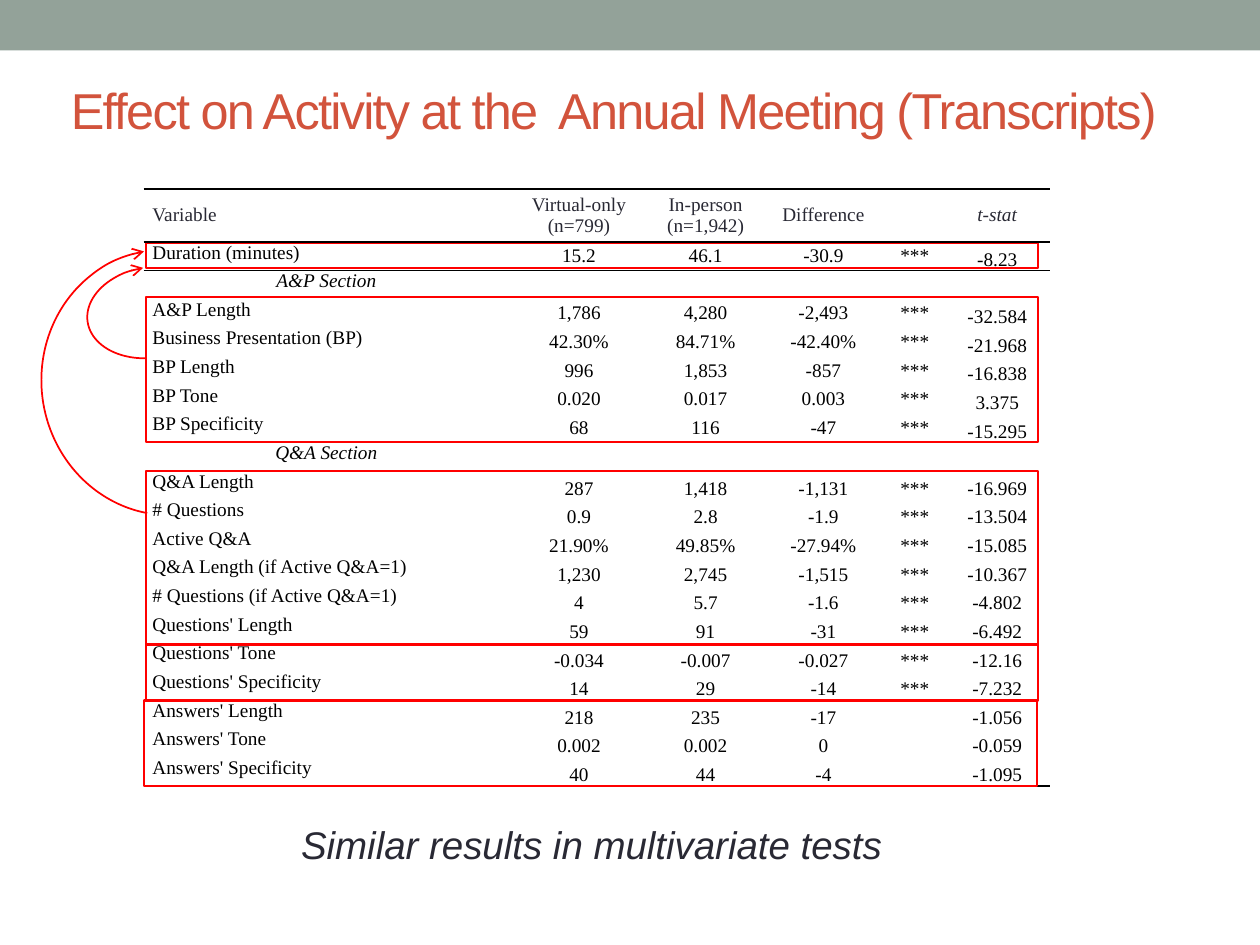
from lxml.etree import SubElement
from pptx import Presentation
from pptx.dml.color import RGBColor
from pptx.enum.shapes import MSO_SHAPE as Shape
from pptx.enum.text import MSO_ANCHOR as Anchor, MSO_AUTO_SIZE as AutoSize, PP_ALIGN as Align
from pptx.oxml.ns import qn
from pptx.util import Inches, Pt

COLORS = {"band": "93A299", "title": "D2533C", "dark": "292934",
          "black": "000000", "red": "FF0000"}


def add_run(paragraph, text, font, size, color, italic=False):
    run = paragraph.add_run()
    run.text = text
    run.font.name = font
    run.font.size = Pt(size)
    run.font.italic = italic
    run.font.color.rgb = RGBColor.from_string(COLORS[color])
    return run


def add_outline(kind, left, top, width, height, line_width):
    shape = slide.shapes.add_shape(kind, Inches(left), Inches(top), Inches(width), Inches(height))
    shape.shadow.inherit = False
    shape.fill.background()
    shape.line.color.rgb = RGBColor.from_string(COLORS["red"])
    shape.line.width = Pt(line_width)
    return shape


presentation = Presentation()
presentation.slide_width, presentation.slide_height = Inches(10), Inches(7.5)
slide = presentation.slides.add_slide(presentation.slide_layouts[6])

# Top band
band = slide.shapes.add_shape(Shape.RECTANGLE, 0, 0, Inches(10), Inches(0.4))
band.shadow.inherit = False
band.fill.solid()
band.fill.fore_color.rgb = RGBColor.from_string(COLORS["band"])
band.line.fill.background()

# Title
title = slide.shapes.add_textbox(Inches(0.37), Inches(0.62), Inches(9), Inches(0.5))
title.text_frame.word_wrap = True
title.text_frame.vertical_anchor = Anchor.MIDDLE
paragraph = title.text_frame.paragraphs[0]
paragraph.alignment = Align.CENTER
run = add_run(paragraph, "Effect on Activity at the  Annual Meeting (Transcripts)", "Arial", 28.8, "title")
run.font._element.set("spc", "-100")

# Closing remark
remark = slide.shapes.add_textbox(Inches(2.26), Inches(6.47), Inches(4.87), Inches(0.47))
remark.text_frame.word_wrap = False
remark.text_frame.auto_size = AutoSize.SHAPE_TO_FIT_TEXT
paragraph = remark.text_frame.paragraphs[0]
paragraph.alignment = Align.CENTER
add_run(paragraph, "Similar results in multivariate tests", "Arial", 22, "dark", italic=True)

# Highlight boxes behind the table
for top, height in [(1.93, 0.2), (2.36, 1.15)]:
    add_outline(Shape.RECTANGLE, 1.16, top, 7.08, height, 1.25)

# Table
rows = [
    ("Variable", "Virtual-only (n=799)", "In-person (n=1,942)", "Difference", "", "t-stat"),
    ("Duration (minutes)", "15.2", "46.1", "-30.9", "***", "-8.23"),
    ("A&P Section", "", "", "", "", ""),
    ("A&P Length", "1,786", "4,280", "-2,493", "***", "-32.584"),
    ("Business Presentation (BP)", "42.30%", "84.71%", "-42.40%", "***", "-21.968"),
    ("BP Length", "996", "1,853", "-857", "***", "-16.838"),
    ("BP Tone", "0.020", "0.017", "0.003", "***", "3.375"),
    ("BP Specificity", "68", "116", "-47", "***", "-15.295"),
    ("Q&A Section", "", "", "", "", ""),
    ("Q&A Length", "287", "1,418", "-1,131", "***", "-16.969"),
    ("# Questions", "0.9", "2.8", "-1.9", "***", "-13.504"),
    ("Active Q&A", "21.90%", "49.85%", "-27.94%", "***", "-15.085"),
    ("Q&A Length (if Active Q&A=1)", "1,230", "2,745", "-1,515", "***", "-10.367"),
    ("# Questions (if Active Q&A=1)", "4", "5.7", "-1.6", "***", "-4.802"),
    ("Questions' Length", "59", "91", "-31", "***", "-6.492"),
    ("Questions' Tone", "-0.034", "-0.007", "-0.027", "***", "-12.16"),
    ("Questions' Specificity", "14", "29", "-14", "***", "-7.232"),
    ("Answers' Length", "218", "235", "-17", "", "-1.056"),
    ("Answers' Tone", "0.002", "0.002", "0", "", "-0.059"),
    ("Answers' Specificity", "40", "44", "-4", "", "-1.095"),
]
column_widths = [2.9, 1.11, 0.9, 0.97, 0.48, 0.83]
header_height, table_height = 0.42, 4.74
last_row = len(rows) - 1
qa_section = 8
borders = {0: [("a:lnT", 1.5), ("a:lnB", 1)], 1: [("a:lnT", 1)], last_row: [("a:lnB", 1.5)]}

frame = slide.shapes.add_table(len(rows), len(column_widths), Inches(1.14), Inches(1.5),
                               Inches(7.19), Inches(table_height))
table = frame.table
table.first_row = table.horz_banding = False
# Plain style without grid lines
table._tbl.tblPr.find(qn("a:tableStyleId")).text = "{2D5ABB26-0587-4C30-8999-92F81FD0307C}"
for column, width in zip(table.columns, column_widths):
    column.width = Inches(width)

for row_index, values in enumerate(rows):
    is_header, is_section = row_index == 0, values[0].endswith("Section")
    body_height = (table_height - header_height) / last_row
    table.rows[row_index].height = Inches(header_height if is_header else body_height)
    for column_index, value in enumerate(values):
        cell = table.cell(row_index, column_index)
        cell.margin_left = cell.margin_right = Inches(0.07)
        cell.margin_top = cell.margin_bottom = 0
        if is_header:
            cell.vertical_anchor = Anchor.MIDDLE
        elif column_index == 0:
            cell.vertical_anchor = Anchor.TOP
        elif column_index == 5 or row_index > qa_section:
            cell.vertical_anchor = Anchor.BOTTOM
        else:
            cell.vertical_anchor = Anchor.MIDDLE
        paragraph = cell.text_frame.paragraphs[0]
        paragraph.alignment = Align.CENTER if column_index or is_section else Align.LEFT
        if value:
            add_run(paragraph, value, "Times New Roman", 11, "dark" if is_header else "black",
                    italic=is_section or value == "t-stat")
        else:
            # Keeps empty cells from stretching the row
            SubElement(paragraph._p, qn("a:endParaRPr"), sz="1100")
        for tag, width in borders.get(row_index, []):
            border = SubElement(cell._tc.get_or_add_tcPr(), qn(tag), w=str(Pt(width)))
            fill = SubElement(border, qn("a:solidFill"))
            SubElement(fill, qn("a:srgbClr"), val=COLORS["black"])
        cell.fill.background()

# Highlight boxes over the table
for left, top, width, height in [(1.16, 3.74, 7.08, 1.38), (1.16, 5.11, 7.08, 0.45),
                                 (1.14, 5.56, 7.09, 0.68)]:
    add_outline(Shape.RECTANGLE, left, top, width, height, 1.25)

# Curved arrows to the duration row
for left, top, width, height, start, end in [(0.69, 2.12, 1.02, 0.72, 63.21, 160.9),
                                             (0.33, 1.98, 1.99, 2.11, 64.18, 161.08)]:
    arc = add_outline(Shape.ARC, left, top, width, height, 1)
    arc.rotation = 351.6
    arc.adjustments[0], arc.adjustments[1] = start, end
    SubElement(arc.line._get_or_add_ln(), qn("a:tailEnd"), type="arrow")

presentation.save("out.pptx")
